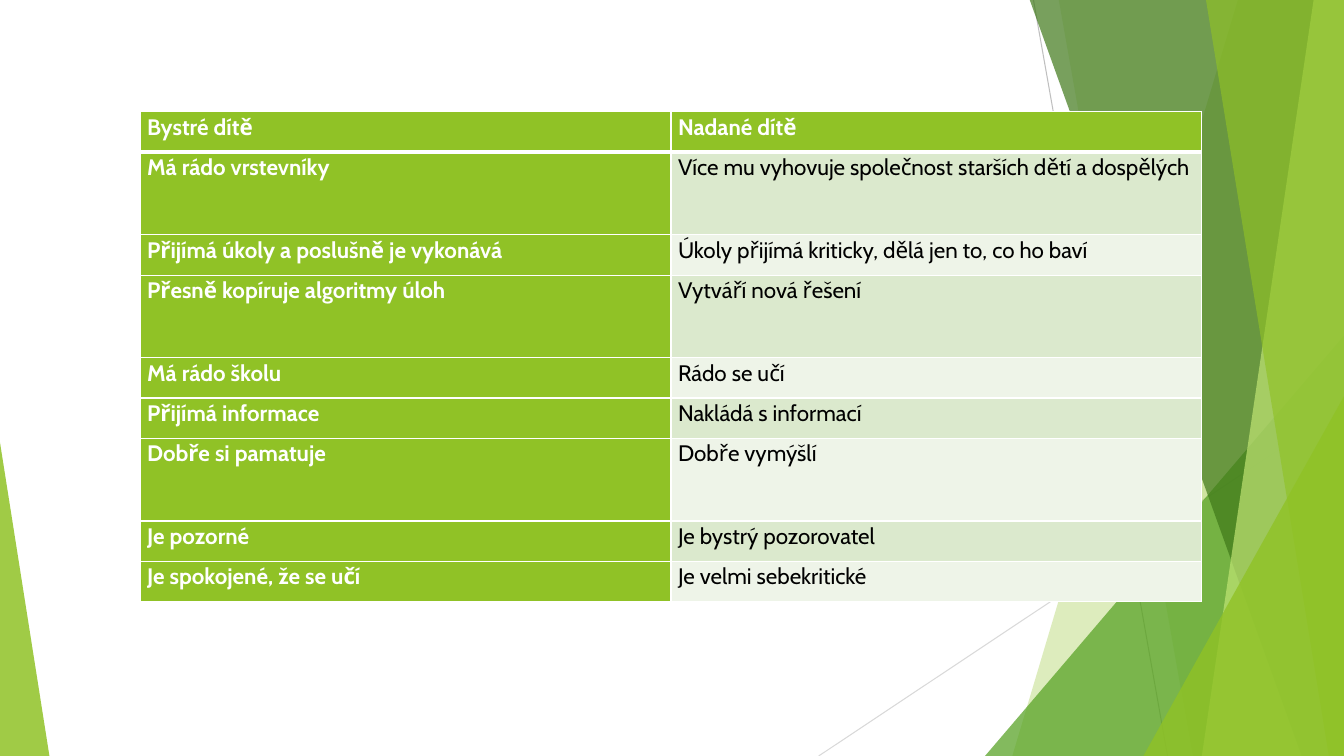
"""Builds a slide that compares a bright child with a gifted child."""
from dataclasses import dataclass

from lxml.etree import SubElement
from pptx import Presentation
from pptx.dml.color import RGBColor
from pptx.enum.shapes import MSO_CONNECTOR, MSO_SHAPE
from pptx.oxml import parse_xml
from pptx.oxml.ns import nsdecls, qn
from pptx.util import Inches, Pt


@dataclass(frozen=True)
class Theme:
    """Colours, font and sizes of the slide."""
    lime: str = "90C226"
    green: str = "54A021"
    forest: str = "3F7819"
    pale_lime: str = "C0E474"
    band_dark: str = "DBE9CD"
    band_light: str = "EEF4E8"
    white: str = "FFFFFF"
    black: str = "000000"
    grey: str = "BFBFBF"
    light_grey: str = "D9D9D9"
    font: str = "Cabin"
    text_size: float = 16
    hairline: float = 0.75
    grid_line: float = 1
    header_line: float = 3


THEME = Theme()
TOP, RIGHT, BOTTOM = -0.01, 13.33, 7.5
ROW_HEIGHT, TALL_ROW_HEIGHT = 0.4, 0.82
TALL_ROWS = {1, 3, 6}
COMPARISON = [
    ("Bystré dítě", "Nadané dítě"),
    ("Má rádo vrstevníky", "Více mu vyhovuje společnost starších dětí a dospělých"),
    ("Přijímá úkoly a poslušně je vykonává", "Úkoly přijímá kriticky, dělá jen to, co ho baví"),
    ("Přesně kopíruje algoritmy úloh", "Vytváří nová řešení"),
    ("Má rádo školu", "Rádo se učí"),
    ("Přijímá informace", "Nakládá s informací"),
    ("Dobře si pamatuje", "Dobře vymýšlí"),
    ("Je pozorné", "Je bystrý pozorovatel"),
    ("Je spokojené, že se učí", "Je velmi sebekritické"),
]


def apply_format(target, values):
    """Set each attribute of target from a dict."""
    for name, value in values.items():
        setattr(target, name, value)


def paint(shape, color, opacity):
    """Give a shape a translucent fill without line or shadow."""
    shape.shadow.inherit = False
    shape.line.fill.background()
    shape.fill.solid()
    shape.fill.fore_color.rgb = RGBColor.from_string(color)
    tint = shape.fill._xPr.find(qn("a:solidFill"))[0]
    SubElement(tint, qn("a:alpha")).set("val", str(opacity * 1000))


def add_ray(slide, start, end, color):
    """Draw a thin straight line."""
    ray = slide.shapes.add_connector(
        MSO_CONNECTOR.STRAIGHT, *(Inches(value) for value in (*start, *end)))
    ray.line.color.rgb = RGBColor.from_string(color)
    ray.line.width = Pt(THEME.hairline)
    SubElement(ray._element.spPr, qn("a:effectLst"))


def add_facet(slide, top_x, bottom_x, color, opacity):
    """Draw a full-height facet that reaches the right edge."""
    corners = [(top_x, TOP), (RIGHT, TOP), (RIGHT, BOTTOM), (bottom_x, BOTTOM)]
    first, *others = [(Inches(x), Inches(y)) for x, y in corners]
    outline = slide.shapes.build_freeform(*first)
    outline.add_line_segments(others, close=True)
    paint(outline.convert_to_shape(), color, opacity)


def add_wedge(slide, left, top, width, apex, color, opacity):
    """Draw a right triangle that stands on the bottom edge."""
    wedge = slide.shapes.add_shape(
        MSO_SHAPE.ISOSCELES_TRIANGLE, Inches(left), Inches(top),
        Inches(width), Inches(BOTTOM - top))
    wedge.adjustments[0] = apex
    paint(wedge, color, opacity)


def add_backdrop(slide):
    """Draw the faceted decoration from back to front."""
    add_ray(slide, (10.25, 0), (11.58, BOTTOM), THEME.grey)
    add_ray(slide, (RIGHT, 4.03), (8.12, BOTTOM), THEME.light_grey)
    add_facet(slide, 12.28, 10.04, THEME.lime, 30)
    add_facet(slide, 10.5, 11.83, THEME.lime, 20)
    add_wedge(slide, 9.77, 3.33, 3.56, 1, THEME.green, 72)
    add_facet(slide, 10.21, 12.91, THEME.forest, 70)
    add_facet(slide, 13.03, 11.92, THEME.pale_lime, 70)
    add_facet(slide, 11.96, 13.18, THEME.lime, 65)
    add_wedge(slide, 11.34, 3.93, 1.99, 1, THEME.lime, 80)
    add_wedge(slide, 0, 4.39, 0.49, 0, THEME.lime, 85)


def set_borders(cell, row):
    """Draw white cell borders, heavier under the header."""
    widths = dict.fromkeys("LRTB", THEME.grid_line)
    if row < 2:
        widths["B" if row == 0 else "T"] = THEME.header_line
    for position, (side, width) in enumerate(widths.items()):
        cell._tc.get_or_add_tcPr().insert(position, parse_xml(
            f'<a:ln{side} {nsdecls("a")} w="{Pt(width)}"><a:solidFill>'
            f'<a:srgbClr val="{THEME.white}"/></a:solidFill></a:ln{side}>'))


def fill_cell(cell, text, row, column):
    """Write and format one table cell."""
    heading = row == 0 or column == 0
    band = THEME.band_dark if row % 2 else THEME.band_light
    apply_format(cell, {
        "text": text, "margin_left": Inches(0.07), "margin_right": Inches(0.07),
        "margin_top": 0, "margin_bottom": 0})
    paragraph = cell.text_frame.paragraphs[0]
    paragraph.line_spacing = 1.07
    font = paragraph.runs[0].font
    apply_format(font, {"name": THEME.font, "size": Pt(THEME.text_size), "bold": heading})
    font.color.rgb = RGBColor.from_string(THEME.white if heading else THEME.black)
    cell.fill.solid()
    cell.fill.fore_color.rgb = RGBColor.from_string(THEME.lime if heading else band)
    set_borders(cell, row)


def add_comparison(slide):
    """Add the table of both kinds of children."""
    table = slide.shapes.add_table(
        len(COMPARISON), 2, Inches(1.39), Inches(1.11), Inches(10.53), Inches(4.86)).table
    for row, traits in enumerate(COMPARISON):
        table.rows[row].height = Inches(TALL_ROW_HEIGHT if row in TALL_ROWS else ROW_HEIGHT)
        for column, trait in enumerate(traits):
            fill_cell(table.cell(row, column), trait, row, column)


def main():
    """Build and save the slide."""
    presentation = Presentation()
    apply_format(presentation, {"slide_width": Inches(RIGHT), "slide_height": Inches(BOTTOM)})
    slide = presentation.slides.add_slide(presentation.slide_layouts[6])
    add_backdrop(slide)
    add_comparison(slide)
    presentation.save("out.pptx")


if __name__ == "__main__":
    main()
